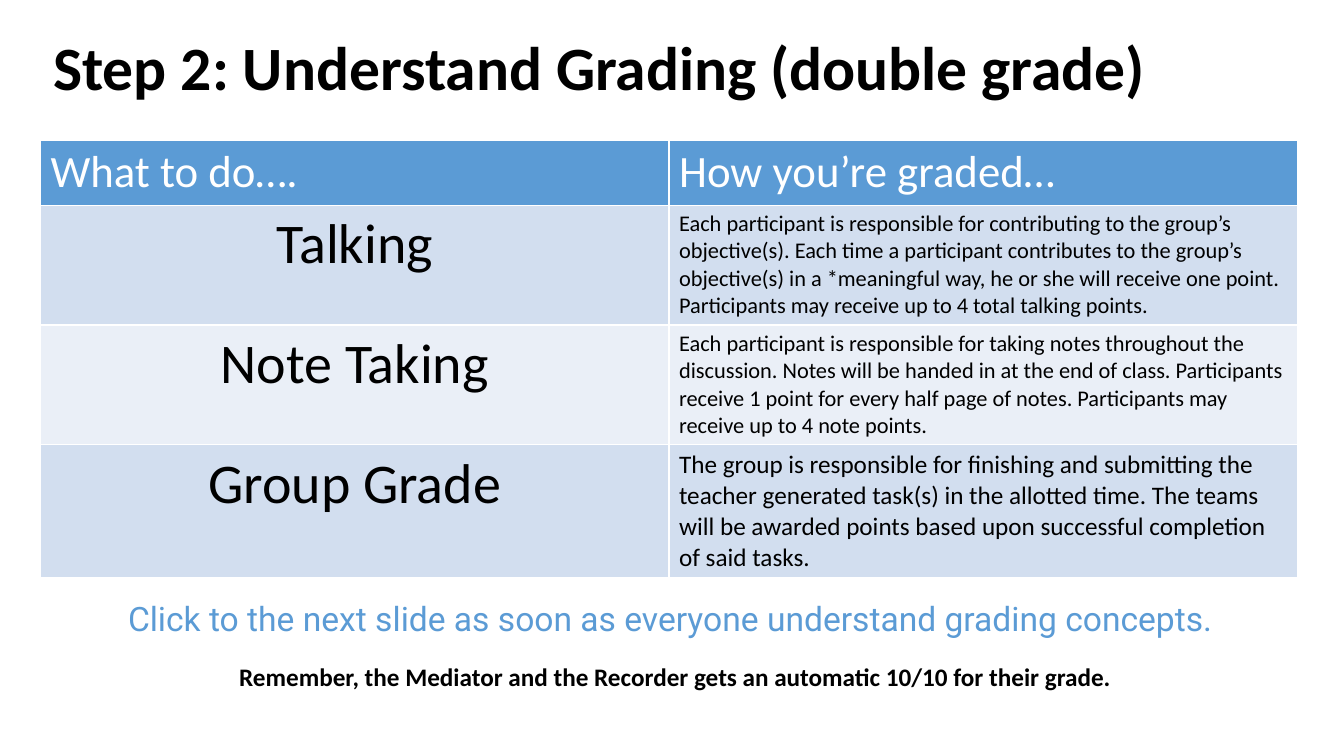
from collections import namedtuple

from lxml import etree
from pptx import Presentation
from pptx.dml.color import RGBColor
from pptx.enum.text import MSO_ANCHOR, MSO_AUTO_SIZE, PP_ALIGN
from pptx.oxml.ns import qn
from pptx.util import Cm, Pt

LEFT, CENTER = PP_ALIGN.LEFT, PP_ALIGN.CENTER
TOP, MIDDLE = MSO_ANCHOR.TOP, MSO_ANCHOR.MIDDLE
NO_FIT = MSO_AUTO_SIZE.NONE
TITLE_ONLY = 5

COLORS = {
    "text": "000000",
    "white": "FFFFFF",
    "accent": "5B9BD5",
    "band_dark": "D2DEEF",
    "band_light": "EAEFF7",
}

Box = namedtuple("Box", "left top width height")

HEADINGS = ("What to do….", "How you’re graded…")
CRITERIA = (
    ("Talking",
     "Each participant is responsible for contributing to the group’s "
     "objective(s). Each time a participant contributes to the group’s "
     "objective(s) in a *meaningful way, he or she will receive one point. "
     "Participants may receive up to 4 total talking points.", 16),
    ("Note Taking",
     "Each participant is responsible for taking notes throughout the "
     "discussion. Notes will be handed in at the end of class. Participants "
     "receive 1 point for every half page of notes. Participants may "
     "receive up to 4 note points.", 16),
    ("Group Grade",
     "The group is responsible for finishing and submitting the teacher "
     "generated task(s) in the allotted time. The teams will be awarded "
     "points based upon successful completion of said tasks.", 18),
)
ROW_HEIGHTS = (1.64, 3.02, 3.02, 3.33)


def write_text(frame, text, size, color="text", align=LEFT, bold=False,
               font="Calibri", anchor=TOP):
    frame.word_wrap = True
    frame.vertical_anchor = anchor
    para = frame.paragraphs[0]
    para.alignment = align
    span = para.add_run()
    span.text = text
    formats = {"name": font, "size": Pt(size), "bold": bold}
    for name, value in formats.items():
        setattr(span.font, name, value)
    span.font.color.rgb = RGBColor.from_string(COLORS[color])
    return para


def place(shape, box):
    for name, value in box._asdict().items():
        setattr(shape, name, Cm(value))


def add_title(page, box):
    title = page.shapes.title
    place(title, box)
    title.text_frame.auto_size = NO_FIT
    para = write_text(title.text_frame, "Step 2: Understand Grading (double grade)",
                      44, bold=True, anchor=MIDDLE)
    para.line_spacing = 0.9


def style_cell(cell, fill):
    properties = cell._tc.get_or_add_tcPr()
    for side in ("lnL", "lnR", "lnT", "lnB"):
        line = etree.SubElement(properties, qn("a:" + side), w=str(Pt(1)))
        solid = etree.SubElement(line, qn("a:solidFill"))
        etree.SubElement(solid, qn("a:srgbClr"), val=COLORS["white"])
    cell.fill.solid()
    cell.fill.fore_color.rgb = RGBColor.from_string(COLORS[fill])


def add_grading_table(page, box):
    lengths = [Cm(value) for value in box]
    table = page.shapes.add_table(len(CRITERIA) + 1, len(HEADINGS), *lengths).table
    for column in table.columns:
        column.width = Cm(box.width / len(HEADINGS))
    for row, height in zip(table.rows, ROW_HEIGHTS):
        row.height = Cm(height)
    for column, heading in enumerate(HEADINGS):
        cell = table.cell(0, column)
        style_cell(cell, "accent")
        write_text(cell.text_frame, heading, 32, "white")
    for row, (task, rule, size) in enumerate(CRITERIA, start=1):
        band = "band_dark" if row % 2 else "band_light"
        task_cell, rule_cell = table.cell(row, 0), table.cell(row, 1)
        style_cell(task_cell, band)
        style_cell(rule_cell, band)
        write_text(task_cell.text_frame, task, 40, align=CENTER)
        write_text(rule_cell.text_frame, rule, size)


def add_note(page, box, text, size, **formats):
    lengths = [Cm(value) for value in box]
    note = page.shapes.add_textbox(*lengths)
    write_text(note.text_frame, text, size, align=CENTER, **formats)


def build_grading_slide(deck):
    page = deck.slides.add_slide(deck.slide_layouts[TITLE_ONLY])
    add_title(page, Box(1.09, 0, 31.67, 3.53))
    add_grading_table(page, Box(1.02, 3.53, 31.68, sum(ROW_HEIGHTS)))
    add_note(page, Box(3.95, 16.54, 26.14, 1.02),
             "Remember, the Mediator and the Recorder gets an automatic 10/10 "
             "for their grade.", 18, bold=True)
    add_note(page, Box(1.09, 14.94, 31.6, 2.06),
             "Click to the next slide as soon as everyone understand grading "
             "concepts.", 24, color="accent", font="Roboto")


def main():
    deck = Presentation()
    deck.slide_width, deck.slide_height = Cm(33.87), Cm(19.05)
    build_grading_slide(deck)
    deck.save("out.pptx")


if __name__ == "__main__":
    main()
